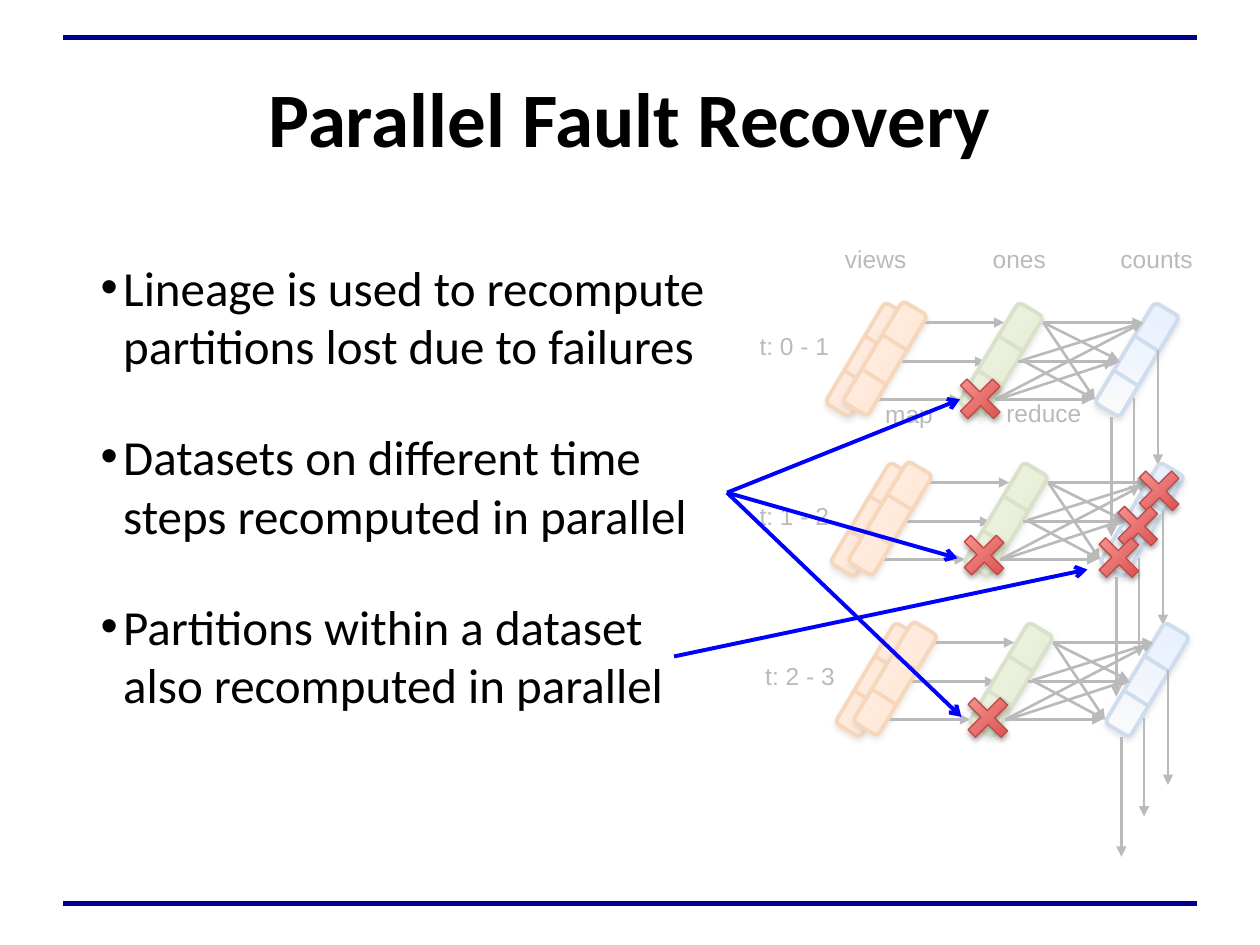
from typing import NamedTuple

from lxml.etree import SubElement
from pptx import Presentation
from pptx.dml.color import RGBColor
from pptx.enum.shapes import MSO_CONNECTOR, MSO_SHAPE as Preset
from pptx.enum.text import MSO_ANCHOR, PP_ALIGN
from pptx.oxml.ns import qn
from pptx.util import Cm, Pt

BLACK = RGBColor(0x00, 0x00, 0x00)
WHITE = RGBColor(0xFF, 0xFF, 0xFF)
NAVY = RGBColor(0x00, 0x00, 0x90)
BLUE = RGBColor(0x00, 0x00, 0xFF)


class Style(NamedTuple):
    start: RGBColor
    end: RGBColor
    angle: int  # counter-clockwise degrees
    line: RGBColor
    weight: float


class Label(NamedTuple):
    text: str
    x: float
    y: float
    width: float


class Segment(NamedTuple):
    x1: float
    y1: float
    x2: float
    y2: float


VIEWS = Style(RGBColor(0xFF, 0x95, 0x3E), RGBColor(0xFF, 0xD2, 0xBD), 90,
              RGBColor(0xE4, 0x6C, 0x0A), 2.25)
ONES = Style(RGBColor(0x9B, 0xBB, 0x59), RGBColor(0xC3, 0xD6, 0x9B), 90,
             RGBColor(0x77, 0x93, 0x3C), 2.25)
COUNTS = Style(RGBColor(0xF5, 0xF4, 0xED), RGBColor(0xA4, 0xC4, 0xFF), 0,
               RGBColor(0x4F, 0x81, 0xBD), 2.25)
FAILURE = Style(RGBColor(0xD1, 0x40, 0x3C), RGBColor(0xFF, 0xA6, 0xA5), 90,
                RGBColor(0xBF, 0x4C, 0x48), 0.75)

POINTS = [
    "Lineage is used to recompute partitions lost due to failures",
    "Datasets on different time steps recomputed in parallel",
    "Partitions within a dataset also recomputed in parallel",
]
LABELS = [
    Label("views", 6.56, 1.94, 0.78), Label("ones", 7.74, 1.94, 0.7),
    Label("counts", 8.73, 1.94, 0.9), Label("map", 6.88, 3.17, 0.67),
    Label("reduce", 7.83, 3.16, 0.91), Label("t: 0 - 1", 5.89, 2.63, 0.83),
    Label("t: 1 - 2", 5.89, 3.98, 0.83), Label("t: 2 - 3", 5.93, 5.25, 0.84),
]
# Arrows of the first time step; later steps are shifted
MAP_ARROWS = [
    Segment(7.18, 2.56, 7.97, 2.56), Segment(7.01, 2.87, 7.82, 2.87),
    Segment(6.84, 3.17, 7.62, 3.17),
]
REDUCE_ARROWS = [
    Segment(8.28, 2.56, 9.07, 2.56), Segment(8.08, 2.87, 8.89, 2.87),
    Segment(7.9, 3.17, 8.67, 3.17), Segment(8.28, 2.56, 8.88, 2.86),
    Segment(8.11, 2.86, 8.69, 3.17), Segment(8.11, 2.86, 9.07, 2.56),
    Segment(7.9, 3.17, 9.07, 2.56), Segment(8.28, 2.56, 8.69, 3.17),
    Segment(7.92, 3.17, 8.84, 2.87),
]
STATE_ARROWS = [
    Segment(9, 3.16, 9, 3.94), Segment(9.19, 2.78, 9.19, 3.69),
    Segment(8.82, 3.31, 8.82, 4.26),
]
DIVIDERS = [Segment(0.45, -0.07, 0.64, 0.05), Segment(0.28, 0.2, 0.47, 0.32)]
FAILURES = [(7.66, 5.51), (9.02, 3.71), (8.85, 3.99), (8.7, 4.24),
            (7.63, 4.22), (7.6, 2.98)]
RECOVERIES = [
    Segment(5.35, 5.21, 8.63, 4.52), Segment(5.77, 3.91, 7.6, 4.43),
    Segment(5.77, 3.91, 7.63, 5.69), Segment(5.77, 3.91, 7.62, 3.17),
]
STEP_X = 0.04
STEP_Y = 1.27


def inches(value: float) -> Cm:
    return Cm(value * 2.54)


def box(x: float, y: float, width: float, height: float) -> list:
    return [inches(v) for v in (x, y, width, height)]


def draw_line(shapes, segment: Segment, color: RGBColor, weight: float,
              head: str = "", dx: float = 0, dy: float = 0) -> None:
    x1, y1, x2, y2 = segment
    ends = [inches(v) for v in (x1 + dx, y1 + dy, x2 + dx, y2 + dy)]
    line = shapes.add_connector(MSO_CONNECTOR.STRAIGHT, *ends)
    line.line.color.rgb = color
    line.line.width = Pt(weight)
    if head:
        SubElement(line.line._get_or_add_ln(), qn("a:tailEnd"), type=head)
    SubElement(line._element.spPr, qn("a:effectLst"))


def draw_styled(shapes, preset: Preset, place: list, rotation: float,
                style: Style):
    shape = shapes.add_shape(preset, *place)
    shape.rotation = rotation
    shape.fill.gradient()
    shape.fill.gradient_angle = style.angle
    for stop, color in zip(shape.fill.gradient_stops, (style.start, style.end)):
        stop.color.rgb = color
    shape.line.color.rgb = style.line
    shape.line.width = Pt(style.weight)
    shape.shadow.inherit = False
    effects = shape._element.spPr.find(qn("a:effectLst"))
    shadow = SubElement(effects, qn("a:outerShdw"), blurRad=str(Pt(3.1)),
                        dist=str(Pt(1.8)), dir="5400000", rotWithShape="0")
    shade = SubElement(shadow, qn("a:srgbClr"), val=str(BLACK))
    SubElement(shade, qn("a:alpha"), val="35000")
    return shape


def draw_dataset(shapes, x: float, y: float, style: Style) -> None:
    """A slanted block split into three partitions."""
    draw_styled(shapes, Preset.FLOWCHART_ALTERNATE_PROCESS,
                box(x, y, 0.93, 0.23), 300.9, style)
    for divider in DIVIDERS:
        draw_line(shapes, divider, style.line, style.weight, dx=x, dy=y)


def draw_label(shapes, label: Label) -> None:
    frame = shapes.add_textbox(*box(label.x, label.y, label.width, 0.3)).text_frame
    frame.word_wrap = False
    frame.margin_top = frame.margin_bottom = 0
    frame.text = label.text
    frame.paragraphs[0].alignment = PP_ALIGN.CENTER
    set_font(frame.paragraphs[0], "Arial", 14)


def set_font(paragraph, name: str, size: float, bold: bool = False) -> None:
    for run in paragraph.runs:
        run.font.name = name
        run.font.size = Pt(size)
        run.font.bold = bold
        run.font.color.rgb = BLACK


def set_margins(frame) -> None:
    frame.word_wrap = True
    frame.margin_left = frame.margin_right = inches(0.1)
    frame.margin_top = frame.margin_bottom = inches(0.1)


def draw_points(shapes) -> None:
    frame = shapes.add_textbox(*box(0.5, 1.94, 5.33, 4.85)).text_frame
    set_margins(frame)
    frame.text = "\n".join(POINTS)
    for point in frame.paragraphs:
        point.space_before = Pt(5.6)
        point.space_after = Pt(24)
        set_font(point, "Calibri", 28)
        props = point._p.get_or_add_pPr()
        props.set("marL", str(inches(0.38)))
        props.set("indent", str(inches(-0.18)))
        SubElement(props, qn("a:buFont"), typeface="Arial")
        SubElement(props, qn("a:buChar"), char="•")


def main() -> None:
    deck = Presentation()
    deck.slide_width, deck.slide_height = inches(10), inches(7.5)
    slide = deck.slides.add_slide(deck.slide_layouts[5])
    shapes = slide.shapes

    # Frame rules, title and points
    for y in (0.3, 7.17):
        draw_line(shapes, Segment(0.5, y, 9.5, y), NAVY, 3)
    title = shapes.title
    title.left, title.top, title.width, title.height = box(0.5, 0.3, 9, 1.25)
    set_margins(title.text_frame)
    title.text_frame.vertical_anchor = MSO_ANCHOR.MIDDLE
    title.text_frame.text = "Parallel Fault Recovery"
    title.text_frame.paragraphs[0].alignment = PP_ALIGN.CENTER
    set_font(title.text_frame.paragraphs[0], "Calibri", 44, bold=True)
    draw_points(shapes)

    # Lineage graph, one row per time step
    for label in LABELS:
        draw_label(shapes, label)
    for step in range(3):
        dx, dy = step * STEP_X, step * STEP_Y
        draw_dataset(shapes, 6.42 + dx, 2.74 + dy, VIEWS)
        for arrow in MAP_ARROWS:
            draw_line(shapes, arrow, BLACK, 1.5, "triangle", dx, dy)
        draw_dataset(shapes, 8.56 + dx, 2.74 + dy, COUNTS)
        draw_dataset(shapes, 7.48 + dx, 2.74 + dy, ONES)
        for arrow in REDUCE_ARROWS + STATE_ARROWS:
            draw_line(shapes, arrow, BLACK, 1.5, "triangle", dx, dy)
        draw_dataset(shapes, 6.56 + dx, 2.73 + dy, VIEWS)

    # Translucent veil over the graph
    veil = shapes.add_shape(Preset.RECTANGLE, *box(5.81, 1.91, 4.11, 5))
    veil.shadow.inherit = False
    veil.line.fill.background()
    veil.fill.solid()
    veil.fill.fore_color.rgb = WHITE
    tint = veil._element.spPr.find(qn("a:solidFill")).find(qn("a:srgbClr"))
    SubElement(tint, qn("a:alpha"), val="73000")

    # Lost partitions and the arrows to them
    for x, y in FAILURES:
        cross = draw_styled(shapes, Preset.CROSS, box(x, y, 0.36, 0.37), 315, FAILURE)
        cross.adjustments[0] = 0.4
    for recovery in RECOVERIES:
        draw_line(shapes, recovery, BLUE, 2.25, "arrow")

    deck.save("out.pptx")


if __name__ == "__main__":
    main()
